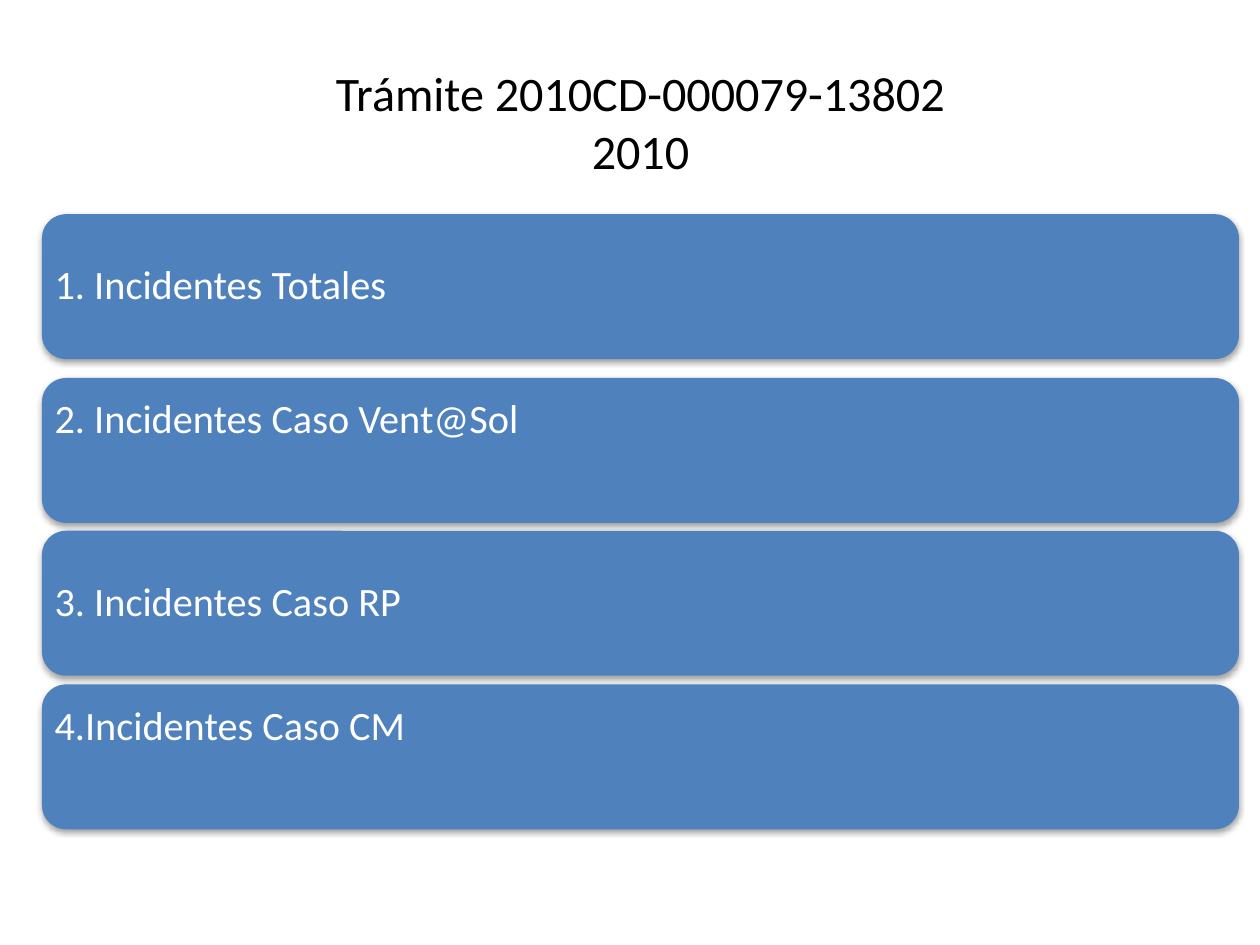
import pptx
import pptx.util
import pptx.oxml
import pptx.oxml.ns
import pptx.dml.color
import pptx.enum.shapes
import pptx.enum.text

Pt = pptx.util.Pt
ALIGN = pptx.enum.text.PP_ALIGN
COLORS = {"bar": "4F81BD", "title": "000000", "label": "FFFFFF", "shadow": "000000"}


def write_text(shape, text, size, color, font="Calibri", align=ALIGN.LEFT,
               insets=(7.2, 3.6, 7.2, 3.6), line_spacing=1.0):
    frame = shape.text_frame
    frame.word_wrap = True
    frame.vertical_anchor = pptx.enum.text.MSO_ANCHOR.MIDDLE
    frame.margin_left, frame.margin_top, frame.margin_right, frame.margin_bottom = map(Pt, insets)
    frame.text = text
    for paragraph in frame.paragraphs:
        paragraph.alignment = align
        paragraph.line_spacing = line_spacing
        paragraph.font.name = font
        paragraph.font.size = Pt(size)
        paragraph.font.color.rgb = pptx.dml.color.RGBColor.from_string(COLORS[color])


class IncidentSlide:
    """Holds the slide and the shared look of its title and bars."""

    left, width, bar_height = 24, 684, 82.8

    def __init__(self, presentation):
        self.slide = presentation.slides.add_slide(presentation.slide_layouts[6])

    def add_title(self, text, top, height):
        shape = self.slide.shapes.add_textbox(Pt(self.left), Pt(top), Pt(self.width), Pt(height))
        write_text(shape, text, 27.5, "title", align=ALIGN.CENTER)

    def add_bar(self, text, top, raise_by=0):
        shape = self.slide.shapes.add_shape(
            pptx.enum.shapes.MSO_SHAPE.ROUNDED_RECTANGLE,
            Pt(self.left), Pt(top), Pt(self.width), Pt(self.bar_height))
        shape.fill.solid()
        shape.fill.fore_color.rgb = pptx.dml.color.RGBColor.from_string(COLORS["bar"])
        shape.line.fill.background()
        self.add_shadow(shape)
        write_text(shape, text, 23, "label", insets=(3.2, 3.2, 3.2, 3.2 + 2 * raise_by),
                   line_spacing=0.9)

    def add_shadow(self, shape):
        shape.shadow.inherit = False
        effects = shape.element.spPr.find(pptx.oxml.ns.qn("a:effectLst"))
        effects.append(pptx.oxml.parse_xml(
            f'<a:outerShdw {pptx.oxml.ns.nsdecls("a")} blurRad="{Pt(3.1)}" dist="{Pt(1.8)}" '
            f'dir="5400000" rotWithShape="0"><a:srgbClr val="{COLORS["shadow"]}">'
            '<a:alpha val="35000"/></a:srgbClr></a:outerShdw>'))


def main():
    presentation = pptx.Presentation()
    presentation.slide_width, presentation.slide_height = Pt(720), Pt(540)
    slide = IncidentSlide(presentation)
    slide.add_title("Trámite 2010CD-000079-13802\n2010", top=36, height=66.24)
    bars = [
        ("1. Incidentes Totales", 122.4, 0),
        ("2. Incidentes Caso Vent@Sol", 216, 17),
        ("3. Incidentes Caso RP", 303.3, 0),
        ("4.Incidentes Caso CM", 391.1, 17),
    ]
    for text, top, raise_by in bars:
        slide.add_bar(text, top, raise_by)
    presentation.save("out.pptx")


if __name__ == "__main__":
    main()
